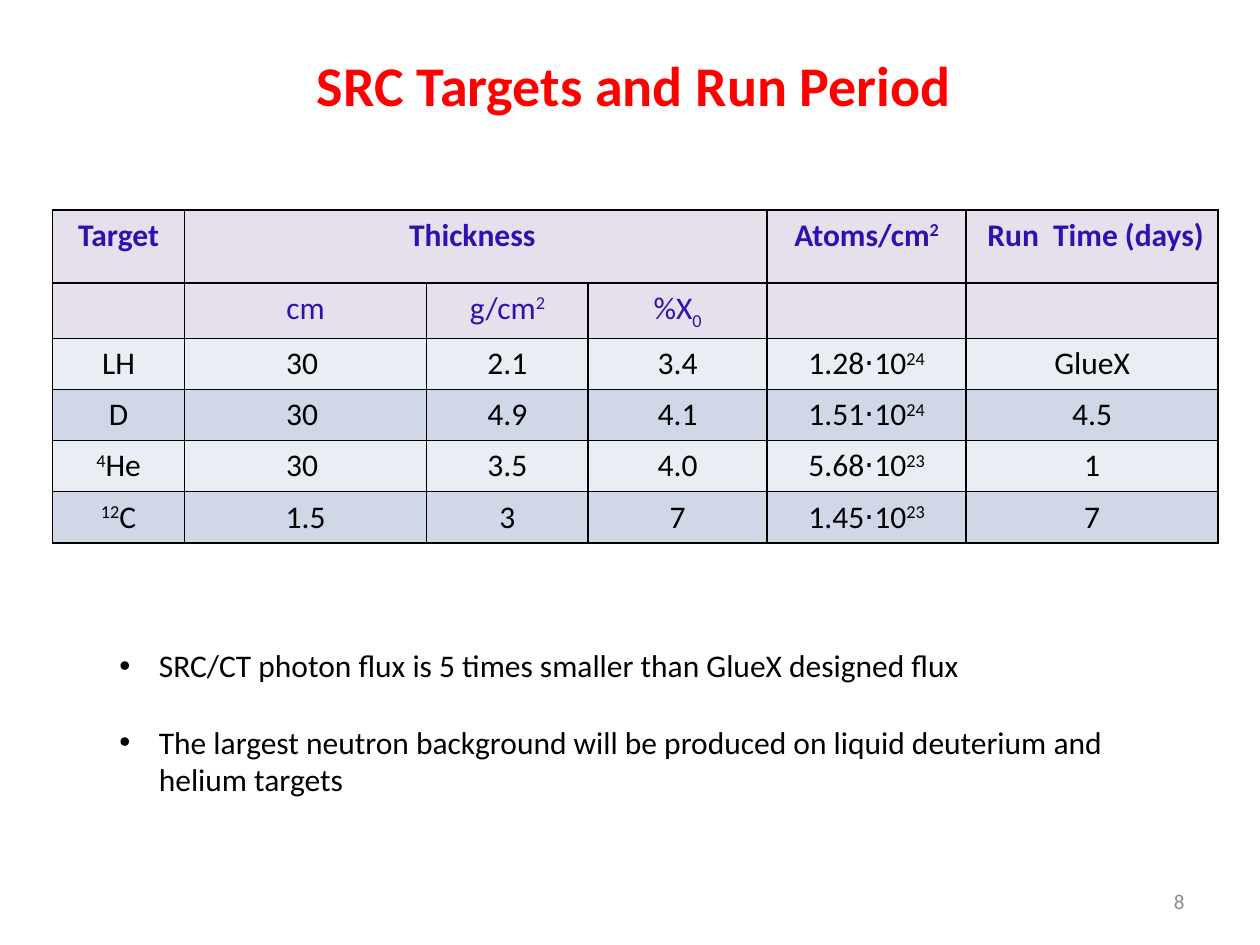
from lxml import etree
from pptx import Presentation
from pptx.dml.color import RGBColor
from pptx.enum import text as t
from pptx.oxml.ns import qn
from pptx.util import Pt

TITLE = "SRC Targets and Run Period "
PAGE_NUMBER = "8"
# ^...^ is superscript, _..._ is subscript
HEADINGS = ["Target", "Thickness ", "", "", "Atoms/cm^2^", " Run  Time (days) "]
UNITS = ["", "cm", "g/cm^2^", "%X_0_", "", ""]
TARGETS = [
    ["LH", "30 ", "2.1", "3.4", "1.28⋅10^24^", "GlueX"],
    ["D", "30 ", "4.9", "4.1", "1.51⋅10^24^", "4.5"],
    ["^4^He", "30 ", "3.5", "4.0", "5.68⋅10^23^", "1"],
    ["^12^C", "1.5", "3", "7", "1.45⋅10^23^", "7"],
]
REMARKS = [
    "SRC/CT photon flux is 5 times smaller than GlueX designed flux",
    "The largest neutron background will be produced on liquid deuterium and helium targets",
]
COLUMN_WIDTHS = [75.6, 138.2, 92.4, 102.2, 113.8, 144]
ROW_HEIGHTS = [41.8] + [29.2] * 5
HEADER_FILL, BAND_FILLS = "E6E0EC", ["E9EDF4", "D0D8E8"]
HEADER_INK, INK = "3210B0", "000000"
BASELINES = {"^": "30000", "_": "-25000"}


def rgb(value):
    return RGBColor.from_string(value)


def add_text(paragraph, content, size=18, color=INK, bold=False,
             align=t.PP_ALIGN.LEFT):
    """Fill a paragraph, raising or lowering the parts between marks."""
    paragraph.alignment = align
    mark = "_" if "_" in content else "^"
    for i, part in enumerate(content.split(mark)):
        if not part:
            continue
        run = paragraph.add_run()
        run.text = part
        for key, value in dict(name="Calibri", size=Pt(size), bold=bold).items():
            setattr(run.font, key, value)
        run.font.color.rgb = rgb(color)
        if i % 2:
            run._r.get_or_add_rPr().set("baseline", BASELINES[mark])


def add_borders(cell):
    properties = cell._tc.get_or_add_tcPr()
    for i, side in enumerate(["lnL", "lnR", "lnT", "lnB"]):
        line = etree.Element(qn(f"a:{side}"), w=str(Pt(1)))
        fill = etree.SubElement(line, qn("a:solidFill"))
        etree.SubElement(fill, qn("a:srgbClr"), val=INK)
        properties.insert(i, line)


def add_bullet(paragraph, indent):
    properties = paragraph._p.get_or_add_pPr()
    properties.set("marL", str(Pt(indent)))
    properties.set("indent", str(-Pt(indent)))
    etree.SubElement(properties, qn("a:buFont"), typeface="Arial")
    etree.SubElement(properties, qn("a:buChar"), char="•")


def place(shape, left, top, width, height):
    box = dict(left=left, top=top, width=width, height=height)
    for key, value in box.items():
        setattr(shape, key, Pt(value))


def add_title(slide):
    title = slide.shapes.title
    place(title, 60, 18, 612, 60)
    title.text_frame.vertical_anchor = t.MSO_ANCHOR.MIDDLE
    add_text(title.text_frame.paragraphs[0], TITLE, 32, "FF0000", True,
             t.PP_ALIGN.CENTER)


def add_targets(slide):
    rows = [HEADINGS, UNITS] + TARGETS
    table = slide.shapes.add_table(
        len(rows), len(COLUMN_WIDTHS), Pt(30), Pt(120),
        Pt(sum(COLUMN_WIDTHS)), Pt(sum(ROW_HEIGHTS))).table
    for column, width in zip(table.columns, COLUMN_WIDTHS):
        column.width = Pt(width)
    for r, (row, height) in enumerate(zip(rows, ROW_HEIGHTS)):
        table.rows[r].height = Pt(height)
        header = r < 2
        for c, content in enumerate(row):
            cell = table.cell(r, c)
            add_borders(cell)
            cell.fill.solid()
            cell.fill.fore_color.rgb = rgb(HEADER_FILL if header else BAND_FILLS[r % 2])
            add_text(cell.text_frame.paragraphs[0], content,
                     color=HEADER_INK if header else INK, bold=r == 0,
                     align=t.PP_ALIGN.CENTER)
    table.cell(0, 1).merge(table.cell(0, 3))


def add_remarks(slide):
    frame = slide.shapes.add_textbox(Pt(61.2), Pt(365.8), Pt(587.5), Pt(116.6)).text_frame
    frame.word_wrap = True
    for i, remark in enumerate(REMARKS):
        paragraph = frame.paragraphs[0] if i == 0 else frame.add_paragraph()
        paragraph.space_after = Pt(22)
        add_text(paragraph, remark)
        add_bullet(paragraph, 22.5)


def add_page_number(slide):
    frame = slide.shapes.add_textbox(Pt(516), Pt(500.5), Pt(168), Pt(28.8)).text_frame
    frame.word_wrap = True
    frame.vertical_anchor = t.MSO_ANCHOR.MIDDLE
    add_text(frame.paragraphs[0], PAGE_NUMBER, 12, "8C8C8C", align=t.PP_ALIGN.RIGHT)


def main():
    deck = Presentation()
    deck.slide_width, deck.slide_height = Pt(720), Pt(540)
    slide = deck.slides.add_slide(deck.slide_layouts[5])
    for add_part in (add_title, add_targets, add_remarks, add_page_number):
        add_part(slide)
    deck.save("out.pptx")


if __name__ == "__main__":
    main()
